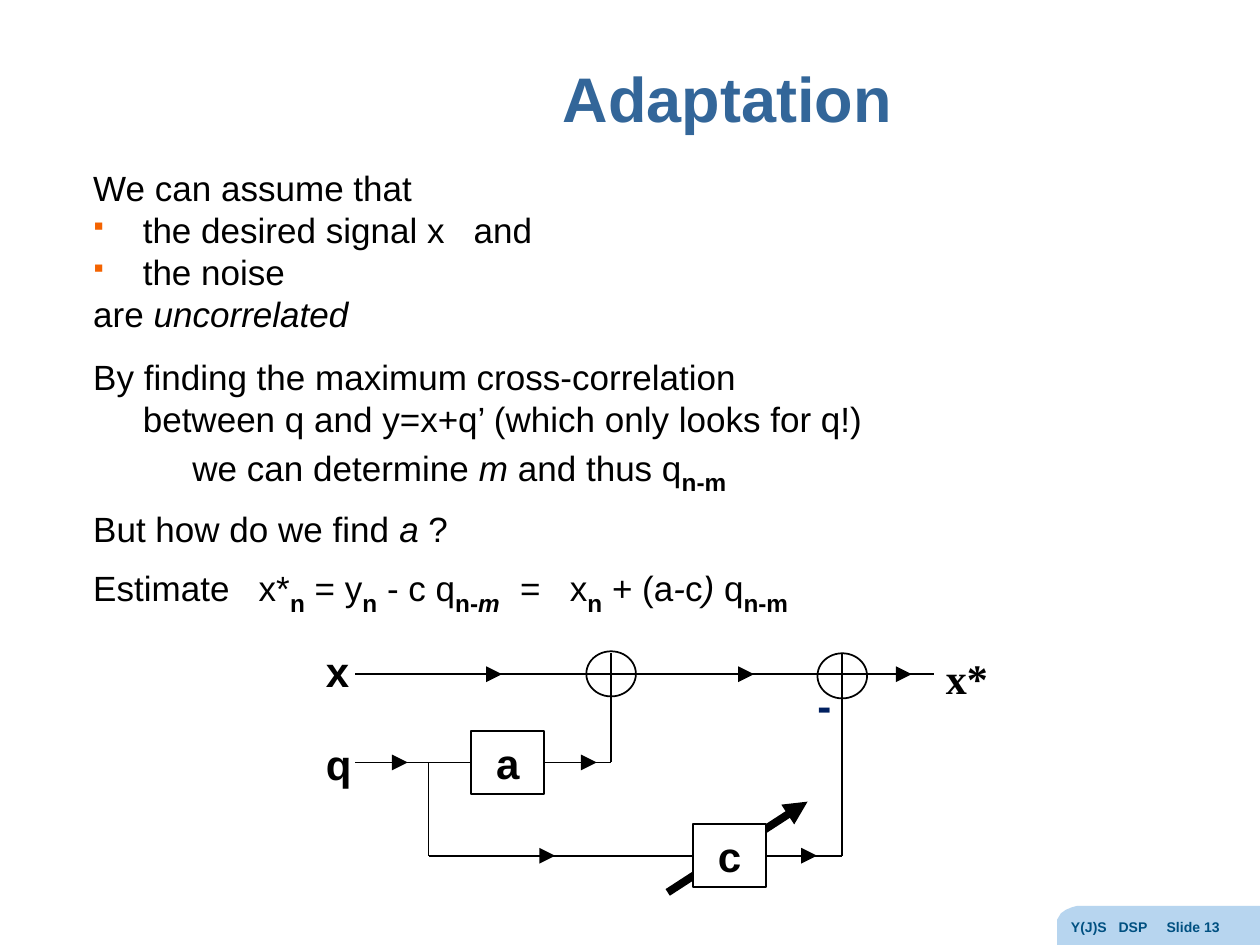
from pptx import Presentation
from pptx.dml.color import RGBColor
from pptx.enum.shapes import MSO_CONNECTOR, MSO_SHAPE
from pptx.enum.text import MSO_ANCHOR, PP_ALIGN
from pptx.oxml.ns import qn
from pptx.util import Cm, Pt
from lxml.etree import SubElement

BLACK = RGBColor(0x00, 0x00, 0x00)
WHITE = RGBColor(0xFF, 0xFF, 0xFF)
TITLE_BLUE = RGBColor(0x33, 0x66, 0x99)
NAVY = RGBColor(0x00, 0x20, 0x60)
ORANGE = "F46300"
FOOTER_FILL = RGBColor(0xB7, 0xD5, 0xEF)
FOOTER_TEXT = RGBColor(0x00, 0x50, 0x81)

INDENT = 1.0  # cm per level of the body text


def write_span(para, text, size=20, font="Arial", color=BLACK, bold=False,
               italic=False, sub=False):
    span = para.add_run()
    span.text = text
    span.font.size = Pt(size)
    span.font.name = font
    span.font.color.rgb = color
    span.font.bold = bold
    span.font.italic = italic
    if sub:
        span._r.get_or_add_rPr().set("baseline", "-25000")


def add_text(page, box, text, align=PP_ALIGN.LEFT, anchor=MSO_ANCHOR.TOP,
             spacing=1.0, **style):
    frame = page.shapes.add_textbox(*map(Cm, box)).text_frame
    frame.word_wrap = True
    frame.vertical_anchor = anchor
    para = frame.paragraphs[0]
    para.alignment = align
    para.line_spacing = spacing
    write_span(para, text, **style)


def set_indent(para, level, bullet):
    props = para._p.get_or_add_pPr()
    props.set("marL", str(Cm(INDENT * level)))
    props.set("indent", str(-Cm(INDENT) if bullet else 0))
    if bullet:
        color = SubElement(props, qn("a:buClr"))
        SubElement(color, qn("a:srgbClr"), val=ORANGE)
        SubElement(props, qn("a:buSzPct"), val="70000")
        # The section sign is a filled square in Wingdings
        SubElement(props, qn("a:buFont"), typeface="Wingdings", charset="2")
        SubElement(props, qn("a:buChar"), char="§")


def add_body(page, box):
    italic = {"italic": True}
    sub = {"size": 24, "bold": True, "sub": True}
    # space before, indent level, bullet, spans
    lines = [
        (6, 0, False, ["We can assume that"]),
        (0, 1, True, ["the desired signal x   and"]),
        (0, 1, True, ["the noise"]),
        (0, 0, False, ["are ", ("uncorrelated", italic)]),
        (12, 0, False, ["By finding the maximum cross-correlation"]),
        (0, 1, False, ["between q and y=x+q’ (which only looks for q!)"]),
        (0, 2, False, ["we can determine ", ("m ", italic), "and thus q",
                       ("n-m", sub)]),
        (6, 0, False, ["But how do we find ", ("a", italic), " ?"]),
        (6, 0, False, ["Estimate   x*", ("n", sub), " = y", ("n", sub),
                       " - c q", ("n-", sub), ("m   ", sub | italic),
                       "=   x", ("n", sub), " + (a", ("-", italic), "c",
                       (") ", italic), "q", ("n-m", sub)]),
    ]
    frame = page.shapes.add_textbox(*map(Cm, box)).text_frame
    frame.word_wrap = True
    for index, (before, level, bullet, spans) in enumerate(lines):
        para = frame.add_paragraph() if index else frame.paragraphs[0]
        para.space_before = Pt(before)
        set_indent(para, level, bullet)
        for item in spans:
            text, style = (item, {}) if isinstance(item, str) else item
            write_span(para, text, **style)


def add_line(page, start, end, width=1, arrow=False):
    line = page.shapes.add_connector(MSO_CONNECTOR.STRAIGHT,
                                     *map(Cm, start + end))
    line.line.color.rgb = BLACK
    line.line.width = Pt(width)
    properties = line._element.spPr
    if arrow:
        SubElement(properties.get_or_add_ln(), qn("a:tailEnd"),
                   type="triangle")
    SubElement(properties, qn("a:effectLst"))
    return line


def add_outline(page, kind, box):
    shape = page.shapes.add_shape(kind, *map(Cm, box))
    shape.shadow.inherit = False
    shape.fill.background()
    shape.line.color.rgb = BLACK
    shape.line.width = Pt(1)
    return shape


def add_gain(page, box, name):
    gain = add_outline(page, MSO_SHAPE.RECTANGLE, box)
    gain.fill.solid()
    gain.fill.fore_color.rgb = WHITE
    frame = gain.text_frame
    frame.vertical_anchor = MSO_ANCHOR.TOP
    para = frame.paragraphs[0]
    para.alignment = PP_ALIGN.CENTER
    write_span(para, name, size=24, bold=True)
    return gain


def add_diagram(page, left, top):
    """Noise canceller: x and q enter at the left, x* leaves at the right."""
    main_row, noise_row, filter_row = 0.71, 2.49, 4.37
    source, branch, adder_a, adder_c, sink = 0.84, 2.32, 6.0, 10.66, 12.5
    gain_width, gain_height, radius = 1.47, 1.27, 0.5
    cross_top, cross_bottom = 0.28, 1.17

    def at(x, y):
        return left + x, top + y

    def wire(*points):
        return [add_line(page, at(*start), at(*end))
                for start, end in zip(points, points[1:])]

    for x, y, width, name, style in [
            (0, 0, 0.84, "x", {}), (0, 1.88, 0.84, "q", {}),
            (9.91, 0.69, 0.71, "-", {"color": NAVY}),
            (sink, 0.15, 1.5, "x*", {"font": "Times New Roman"})]:
        add_text(page, (*at(x, y), width, 1.27), name, size=24, bold=True,
                 **style)

    add_line(page, at(7.14, 5.11), at(9.96, 3.28), width=4.5, arrow=True)
    gains = [add_gain(page, (*at(x, row - gain_height / 2), gain_width,
                             gain_height), name)
             for x, row, name in [(3.18, noise_row, "a"),
                                  (7.65, filter_row, "c")]]

    for x, drop in [(adder_a, 0), (adder_c, 0.04)]:
        add_outline(page, MSO_SHAPE.OVAL,
                    (*at(x - radius, 0.25 + drop), 2 * radius, 0.91))
        wire((x, cross_top), (x, cross_bottom))
    wire(*((x, main_row) for x in (source, adder_a - radius, adder_a + radius,
                                   adder_c - radius, adder_c + radius, sink)))

    into_a, = wire((source, noise_row), (3.18, noise_row))
    from_a, _ = wire((4.65, noise_row), (adder_a, noise_row),
                     (adder_a, cross_bottom))
    _, into_c = wire((branch, noise_row), (branch, filter_row),
                     (7.65, filter_row))
    from_c, _ = wire((9.12, filter_row), (adder_c, filter_row),
                     (adder_c, cross_bottom))
    for gain, entry, leave in zip(gains, (into_a, into_c), (from_a, from_c)):
        entry.end_connect(gain, 1)
        leave.begin_connect(gain, 3)

    flow_marks = {main_row: (3.58, 8.66, 11.84), noise_row: (1.68, 5.49),
                  filter_row: (4.65, 9.93)}
    for row, starts in flow_marks.items():
        for x in starts:
            add_line(page, at(x, row), at(x + 0.22, row), width=3, arrow=True)


def add_footer(page, left, top, width, height):
    def at(x, y):
        return Cm(left + x), Cm(top + y)

    corner = [(0, 0.38), (0, 0.28), (0.08, 0.15), (0.18, 0.08), (0.3, 0.03),
              (0.41, 0)]
    builder = page.shapes.build_freeform(*at(width, 0), scale=1.0)
    builder.add_line_segments(
        [at(*point) for point in [(width, height), (0, height)] + corner])
    tab = builder.convert_to_shape()
    tab.shadow.inherit = False
    tab.fill.solid()
    tab.fill.fore_color.rgb = FOOTER_FILL
    tab.line.fill.background()
    add_text(page, (left + 0.03, top + 0.13, 4.06, 0.66),
             "Y(J)S   DSP     Slide 13", size=8, bold=True, color=FOOTER_TEXT)


def main():
    deck = Presentation()
    deck.slide_width, deck.slide_height = Cm(25.4), Cm(19.05)
    page = deck.slides.add_slide(deck.slide_layouts[6])
    add_footer(page, 21.31, 18.26, 4.09, 0.79)
    add_text(page, (5.38, 0.46, 18.57, 3.18), "Adaptation", size=36, bold=True,
             color=TITLE_BLUE, align=PP_ALIGN.CENTER,
             anchor=MSO_ANCHOR.MIDDLE, spacing=0.9)
    add_body(page, (1.63, 3.23, 22.96, 14.76))
    add_diagram(page, 6.32, 12.88)
    deck.save("out.pptx")


if __name__ == "__main__":
    main()
